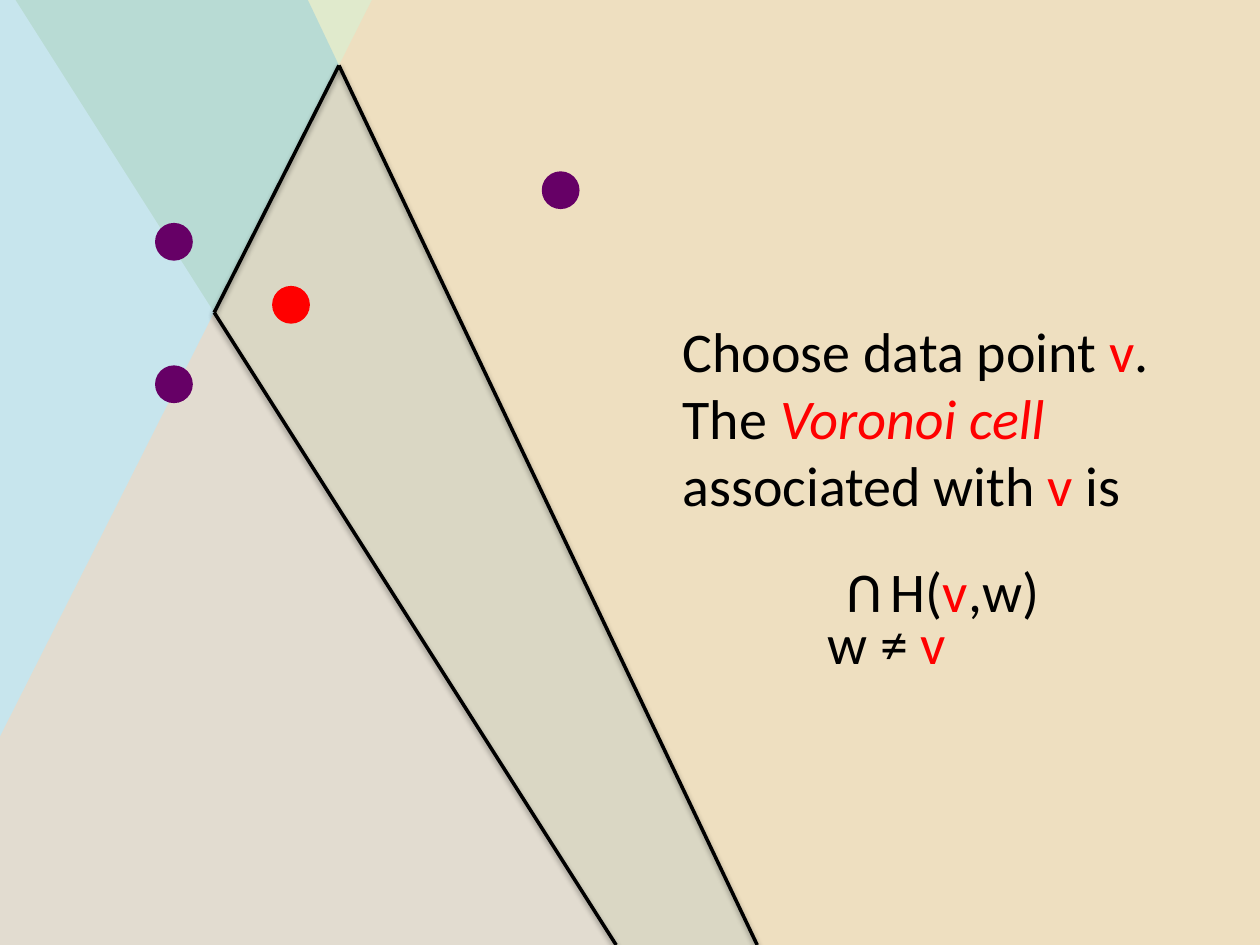
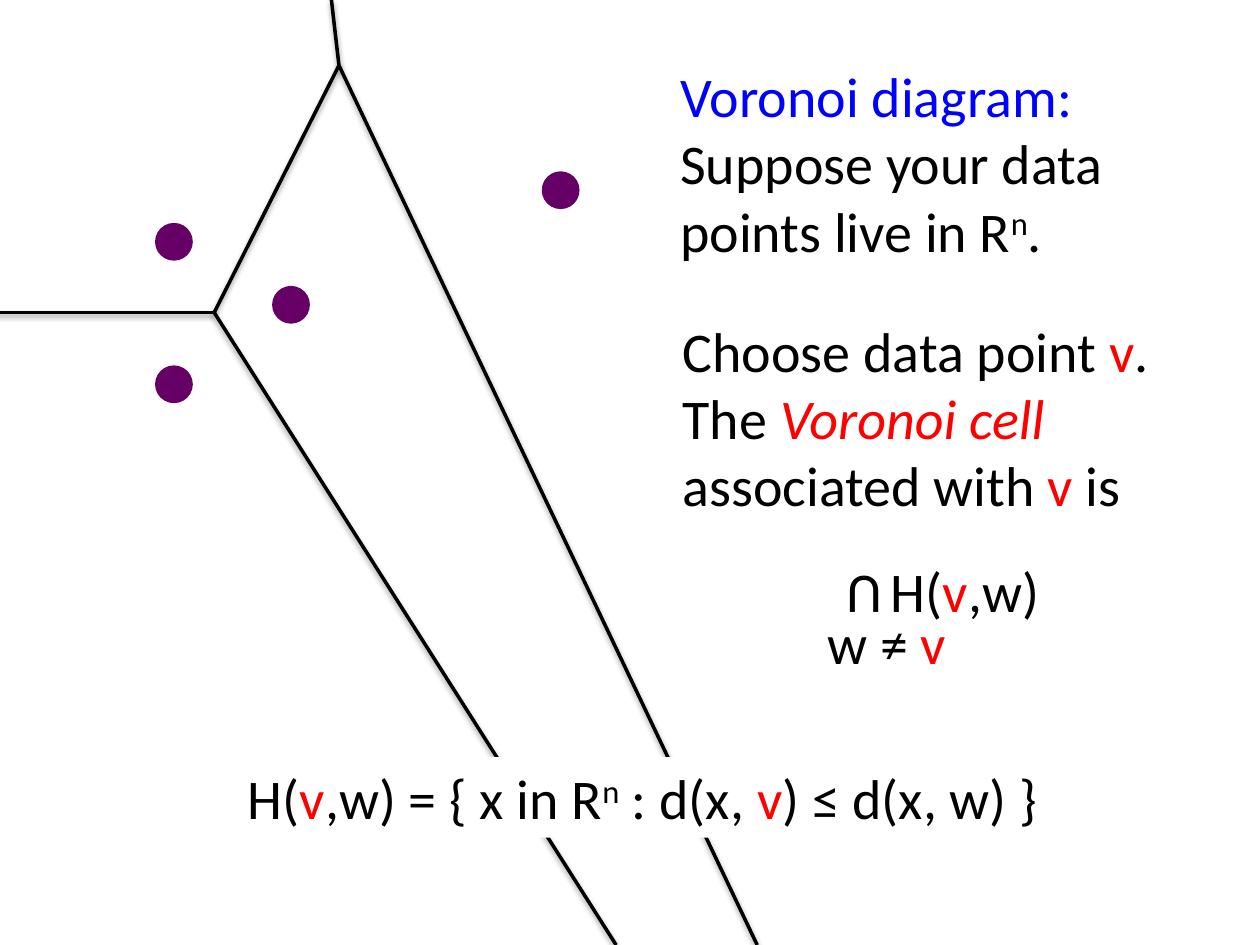
from lxml.etree import SubElement
from pptx import Presentation
from pptx.dml.color import RGBColor
from pptx.enum.shapes import MSO_CONNECTOR, MSO_SHAPE
from pptx.enum.text import PP_ALIGN
from pptx.oxml.ns import qn
from pptx.util import Pt

WIDTH, HEIGHT = 720, 540
COLORS = {
    "ink": "000000", "chosen": "FF0000", "heading": "0000FF",
    "site": "660066", "paper": "FFFFFF",
    "green": "C3D69B", "blue": "93CDDD", "orange": "FCD5B5",
}
HALF_PLANE_ALPHA = 51
SHADOW = {"blurRad": 40000, "dist": 20000, "dir": 5400000, "rotWithShape": 0}
SHADOW_ALPHA = 38

STYLES = {
    "plain": {"color": "ink"},
    "chosen": {"color": "chosen"},
    "term": {"color": "chosen", "italic": True},
    "heading": {"color": "heading"},
    "power": {"color": "ink", "baseline": 30000},
}
BASE_FONT = {"name": "Calibri", "size": Pt(32)}

DOT = 21.6
SITES = [(88.6, 208.8), (155.5, 163.4), (88.6, 127.4), (309.6, 97.9)]
CHOSEN_SITE = 1

LEFT_CORNER, TOP_CORNER = (122.4, 178.6), (193.7, 37.4)
LEFT_FOOT, RIGHT_FOOT = (352.1, HEIGHT), (432.7, HEIGHT)
CELL_EDGES = [(LEFT_FOOT, LEFT_CORNER), (LEFT_CORNER, TOP_CORNER), (TOP_CORNER, RIGHT_FOOT)]
OUTER_EDGES = [(LEFT_CORNER, (-8.6, 178.6)), (TOP_CORNER, (189.4, 0))]

V = ("v", "chosen")
INTRO = [
    [("Voronoi diagram:", "heading")],
    [("Suppose your data points live in R", "plain"), ("n", "power"), (".", "plain")],
]
CELL_DEFINITION = [
    [("Choose data point ", "plain"), V, (".", "plain")],
    [("The ", "plain"), ("Voronoi cell ", "term"), ("associated with ", "plain"), V, (" is", "plain")],
    [("H(", "plain"), V, (",w)", "plain")],
]
INTERSECTION = [[("U", "plain")]]
INDEX = [[("w ≠ ", "plain"), V]]
HALF_SPACE = [[
    ("H(", "plain"), V, (",w) = { x in R", "plain"), ("n", "power"),
    (" : d(x, ", "plain"), V, (") ≤ d(x, w) }", "plain"),
]]

INTRO_BOX = (381.6, 31.7, 301.7, 123.8)
CELL_BOX = (383, 177.3, 337, 185)
INTERSECTION_BOX = (486.7, 319, 24.5, 46)
INDEX_BOX = (465.8, 344.2, 200.9, 46)
HALF_SPACE_BOX = (134.6, 432.7, 541.4, 46)
FORMULA_GAP = 22


def rgb(color):
    return RGBColor.from_string(COLORS[color])


def paint(shape, color):
    shape.shadow.inherit = False
    shape.fill.solid()
    shape.fill.fore_color.rgb = rgb(color)
    shape.line.fill.background()


def set_alpha(color_element, percent):
    SubElement(color_element, qn("a:alpha")).set("val", str(percent * 1000))


def write(frame, paragraphs):
    frame.word_wrap = True
    for index, parts in enumerate(paragraphs):
        paragraph = frame.add_paragraph() if index else frame.paragraphs[0]
        paragraph.alignment = PP_ALIGN.LEFT
        for text, style in parts:
            run = paragraph.add_run()
            run.text = text
            for attribute, value in {**BASE_FONT, **STYLES[style]}.items():
                if attribute == "color":
                    run.font.color.rgb = rgb(value)
                elif attribute == "baseline":
                    run._r.get_or_add_rPr().set(attribute, str(value))
                else:
                    setattr(run.font, attribute, value)


def add_text(slide, box, paragraphs):
    label = slide.shapes.add_textbox(*map(Pt, box))
    write(label.text_frame, paragraphs)
    return label


def add_sites(slide, chosen=None):
    for index, (left, top) in enumerate(SITES):
        site = slide.shapes.add_shape(MSO_SHAPE.OVAL, Pt(left), Pt(top), Pt(DOT), Pt(DOT))
        paint(site, "chosen" if index == chosen else "site")


def add_edges(slide, edges):
    for start, end in edges:
        edge = slide.shapes.add_connector(MSO_CONNECTOR.STRAIGHT, *map(Pt, start + end))
        edge.line.color.rgb = rgb("ink")
        edge.line.width = Pt(2)
        effects = SubElement(edge._element.spPr, qn("a:effectLst"))
        shadow = SubElement(effects, qn("a:outerShdw"))
        for attribute, value in SHADOW.items():
            shadow.set(attribute, str(value))
        shade = SubElement(shadow, qn("a:srgbClr"))
        shade.set("val", COLORS["ink"])
        set_alpha(shade, SHADOW_ALPHA)


def x_at(y, start, end):
    return start[0] + (y - start[1]) * (end[0] - start[0]) / (end[1] - start[1])


def y_at(x, start, end):
    return start[1] + (x - start[0]) * (end[1] - start[1]) / (end[0] - start[0])


def add_half_planes(slide):
    lower, upper, right = CELL_EDGES
    half_planes = {
        "green": [(x_at(0, *lower), 0), (WIDTH, 0), (WIDTH, HEIGHT), LEFT_FOOT],
        "blue": [(0, 0), (x_at(0, *right), 0), RIGHT_FOOT, (0, HEIGHT)],
        "orange": [(x_at(0, *upper), 0), (WIDTH, 0), (WIDTH, HEIGHT), (0, HEIGHT), (0, y_at(0, *upper))],
    }
    for color, outline in half_planes.items():
        corners = [(Pt(x), Pt(y)) for x, y in outline]
        builder = slide.shapes.build_freeform(*corners[0])
        builder.add_line_segments(corners[1:], close=True)
        half_plane = builder.convert_to_shape()
        paint(half_plane, color)
        set_alpha(half_plane._element.spPr.find(qn("a:solidFill"))[0], HALF_PLANE_ALPHA)


def add_cell_definition(slide):
    definition = add_text(slide, CELL_BOX, CELL_DEFINITION)
    formula = definition.text_frame.paragraphs[-1]
    for attribute, value in {"alignment": PP_ALIGN.CENTER, "space_before": Pt(FORMULA_GAP)}.items():
        setattr(formula, attribute, value)
    add_text(slide, INTERSECTION_BOX, INTERSECTION).rotation = 180
    add_text(slide, INDEX_BOX, INDEX)


def build_cell_slide(slide):
    add_half_planes(slide)
    add_sites(slide, CHOSEN_SITE)
    add_edges(slide, CELL_EDGES)
    add_cell_definition(slide)


def build_diagram_slide(slide):
    add_sites(slide)
    add_edges(slide, CELL_EDGES + OUTER_EDGES)
    add_text(slide, INTRO_BOX, INTRO)
    add_cell_definition(slide)
    half_space = slide.shapes.add_shape(MSO_SHAPE.RECTANGLE, *map(Pt, HALF_SPACE_BOX))
    paint(half_space, "paper")
    write(half_space.text_frame, HALF_SPACE)


def main():
    deck = Presentation()
    deck.slide_width, deck.slide_height = Pt(WIDTH), Pt(HEIGHT)
    for build in (build_cell_slide, build_diagram_slide):
        build(deck.slides.add_slide(deck.slide_layouts[6]))
    deck.save("out.pptx")


if __name__ == "__main__":
    main()
